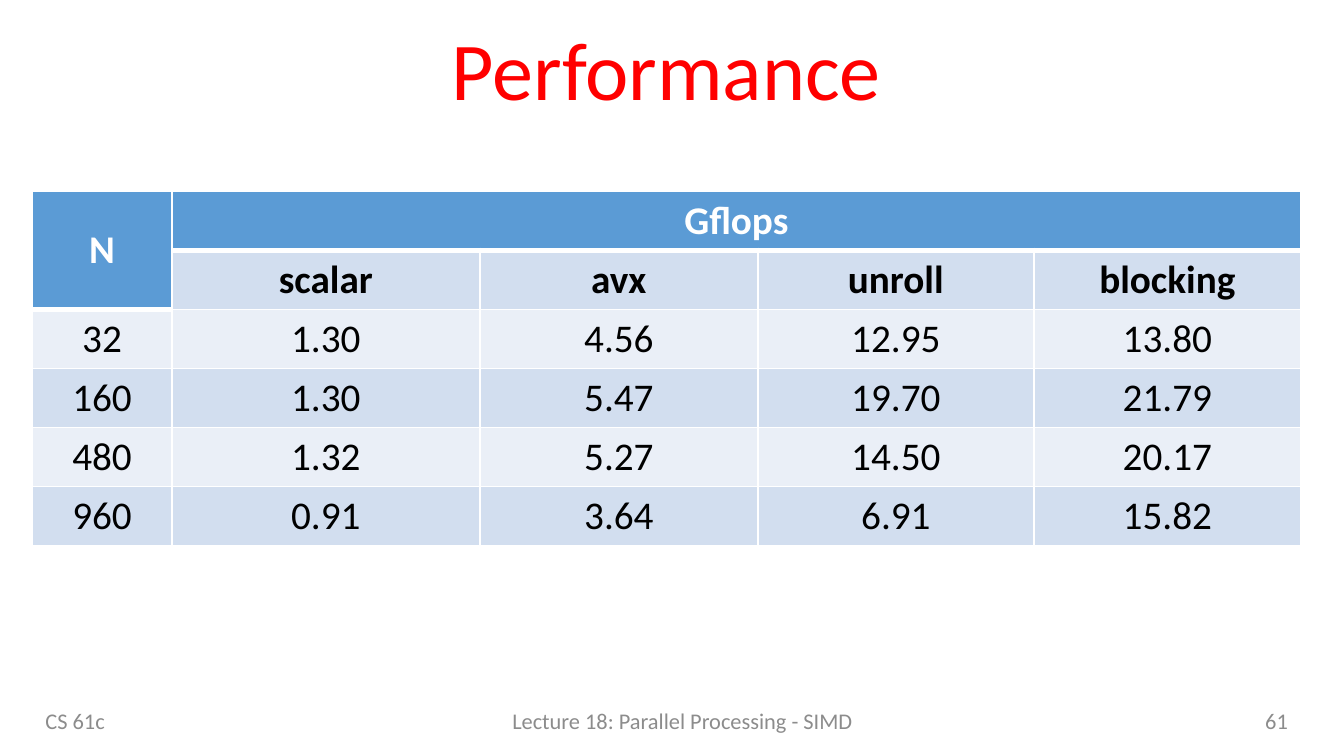
from lxml import etree
from pptx import Presentation
from pptx.dml.color import RGBColor
from pptx.enum.text import MSO_ANCHOR, PP_ALIGN
from pptx.oxml.ns import qn
from pptx.util import Pt

LEFT, CENTER, RIGHT = PP_ALIGN.LEFT, PP_ALIGN.CENTER, PP_ALIGN.RIGHT
MIDDLE, TOP = MSO_ANCHOR.MIDDLE, MSO_ANCHOR.TOP

FONT = "Calibri"
RED, GREY, BLACK, WHITE = "FF0000", "8C8C8C", "000000", "FFFFFF"
BLUE, DARK, LIGHT = "5B9BD5", "D2DEEF", "EAEFF7"

EDGE, WIDTH = 17.3, 679.7
COLS = [74.8, 165, 149, 147.8, 143.1]
ROWS = [
    ["N", "Gflops", "", "", ""],
    ["", "scalar", "avx", "unroll", "blocking"],
    ["32", "1.30", "4.56", "12.95", "13.80"],
    ["160", "1.30", "5.47", "19.70", "21.79"],
    ["480", "1.32", "5.27", "14.50", "20.17"],
    ["960", "0.91", "3.64", "6.91", "15.82"],
]


def color(code):
    return RGBColor.from_string(code)


def write(frame, text, size, code, align, bold=False):
    frame.text = text
    para = frame.paragraphs[0]
    para.alignment = align
    for run in para.runs:
        run.font.name = FONT
        run.font.size = Pt(size)
        run.font.bold = bold
        run.font.color.rgb = color(code)


def add_title(slide, text, x, y, w, h):
    title = slide.shapes.title
    title.left, title.top, title.width, title.height = Pt(x), Pt(y), Pt(w), Pt(h)
    frame = title.text_frame
    write(frame, text, 44, RED, CENTER)
    frame.vertical_anchor = MIDDLE
    frame.paragraphs[0].line_spacing = 0.9


def add_edge(cell, side, width):
    """Draw a white border on one side: L, R, T or B."""
    props = cell._tc.get_or_add_tcPr()
    line = etree.SubElement(props, qn(f"a:ln{side}"), w=str(Pt(width)))
    fill = etree.SubElement(line, qn("a:solidFill"))
    etree.SubElement(fill, qn("a:srgbClr"), val=WHITE)


def is_head(row, col):
    return row == 0 or (row == 1 and col == 0)


def style_cell(cell, text, row, col):
    head = is_head(row, col)
    below = row > 0 and not head and is_head(row - 1, col)
    widths = {"L": 1, "R": 1, "T": 3 if below else 1, "B": 3 if head else 1}
    for side, width in widths.items():
        add_edge(cell, side, width)
    cell.fill.solid()
    cell.fill.fore_color.rgb = color(BLUE if head else DARK if row % 2 else LIGHT)
    cell.margin_left = cell.margin_right = Pt(7.2)
    cell.margin_top = cell.margin_bottom = Pt(3)
    cell.vertical_anchor = MIDDLE if col == 0 and head else TOP
    write(cell.text_frame, text, 21, WHITE if head else BLACK, CENTER, row < 2)


def add_scores(slide, x, y, w, h):
    shape = slide.shapes.add_table(len(ROWS), len(COLS), Pt(x), Pt(y), Pt(w), Pt(h))
    table = shape.table
    for col, width in zip(table.columns, COLS):
        col.width = Pt(width)
    for row in table.rows:
        row.height = Pt(h / len(ROWS))
    for r, texts in enumerate(ROWS):
        for c, text in enumerate(texts):
            style_cell(table.cell(r, c), text, r, c)
    table.cell(0, 0).merge(table.cell(1, 0))
    table.cell(0, 1).merge(table.cell(0, len(COLS) - 1))


def add_footer(slide, x, y, h):
    parts = [
        ("CS 61c", 0, 177.1, LEFT),
        ("Lecture 18: Parallel Processing - SIMD", 192.9, 311, CENTER),
        ("61", 517.7, 162, RIGHT),
    ]
    for text, dx, w, align in parts:
        frame = slide.shapes.add_textbox(Pt(x + dx), Pt(y), Pt(w), Pt(h)).text_frame
        frame.word_wrap = True
        frame.vertical_anchor = MIDDLE
        write(frame, text, 12, GREY, align)


def main():
    deck = Presentation()
    deck.slide_width, deck.slide_height = Pt(720), Pt(405)
    slide = deck.slides.add_slide(deck.slide_layouts[5])
    add_title(slide, "Performance", EDGE, 8.6, WIDTH, 61.9)
    add_scores(slide, EDGE, 102.4, WIDTH, 186)
    add_footer(slide, EDGE, 375.1, 21.6)
    deck.save("out.pptx")


if __name__ == "__main__":
    main()
